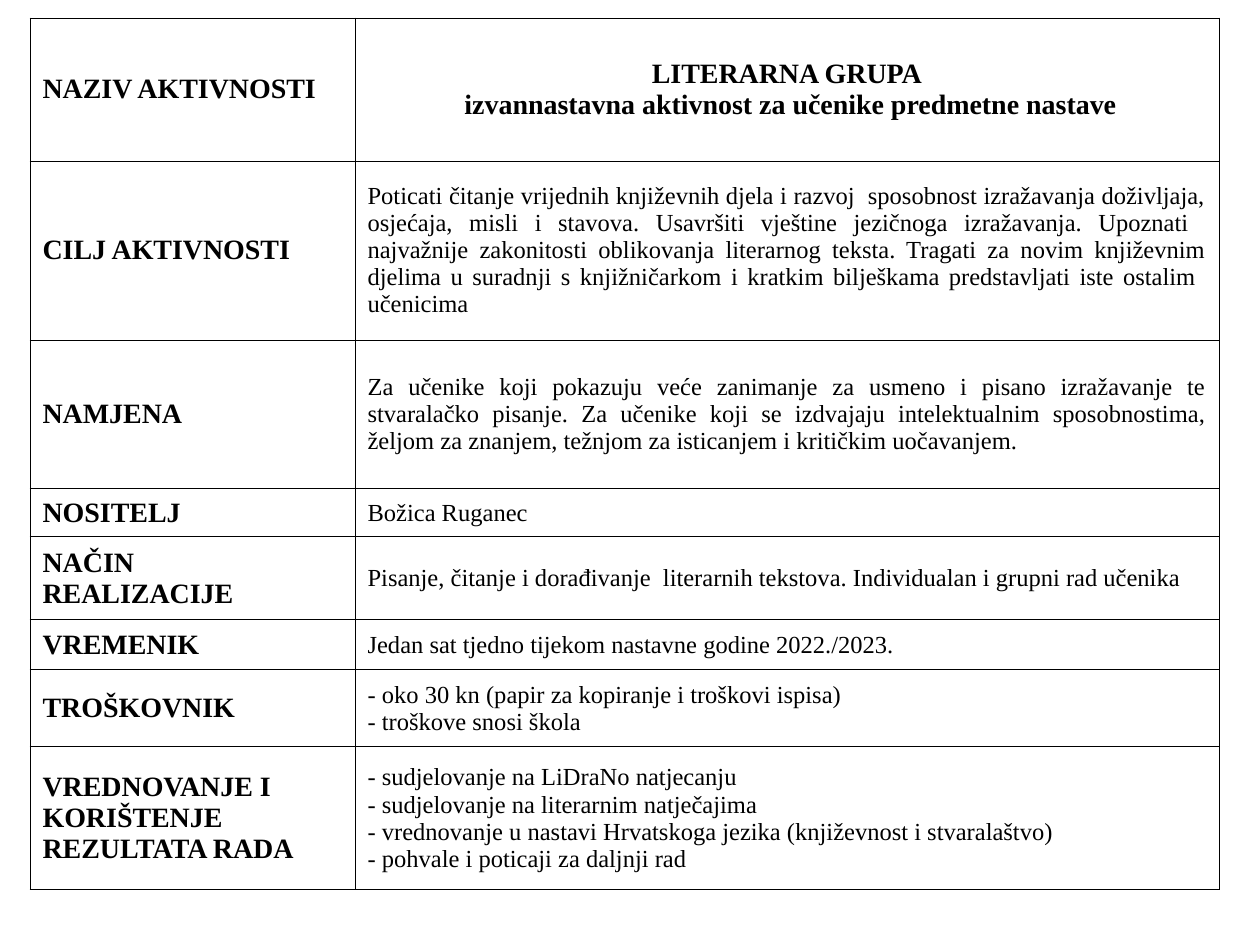
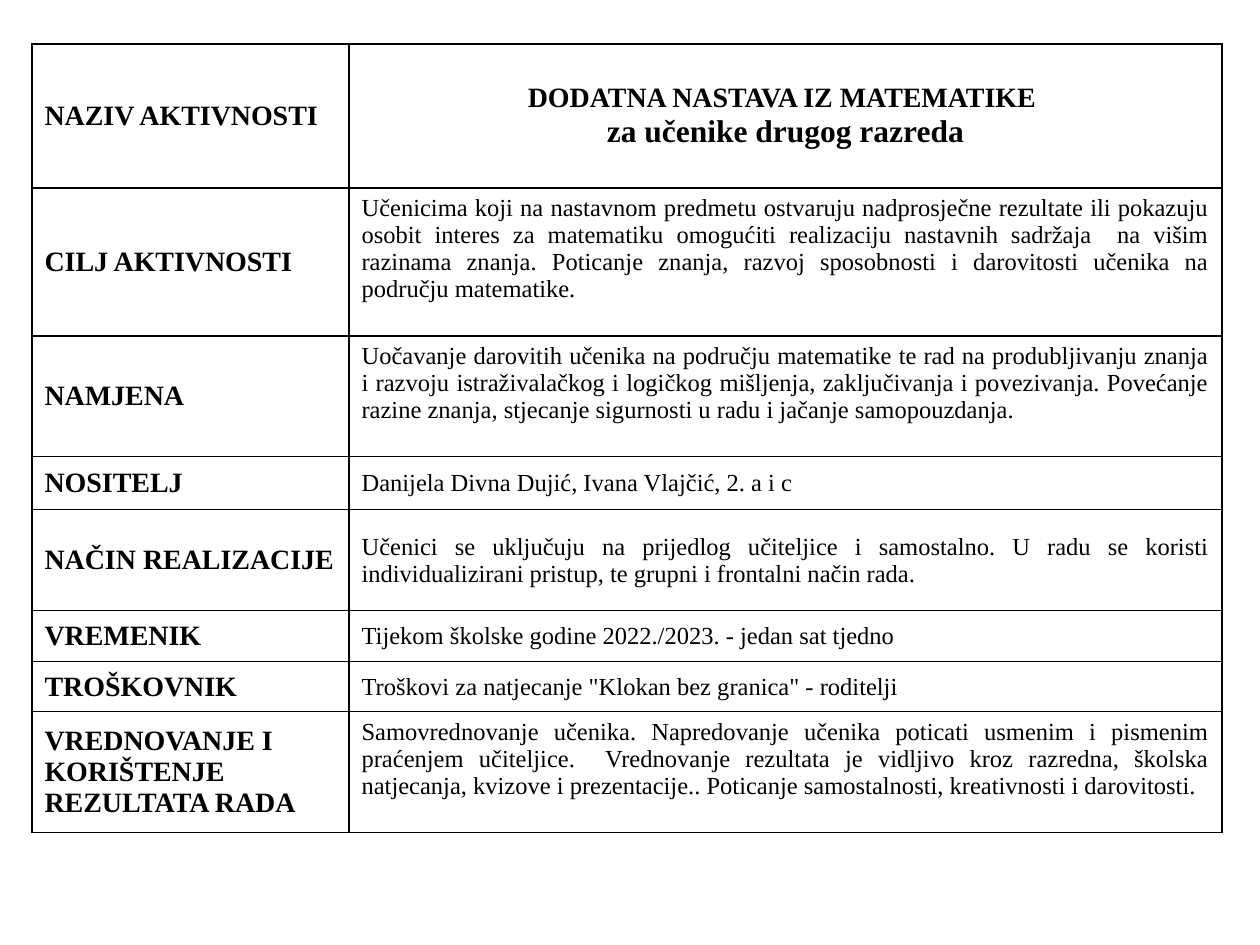
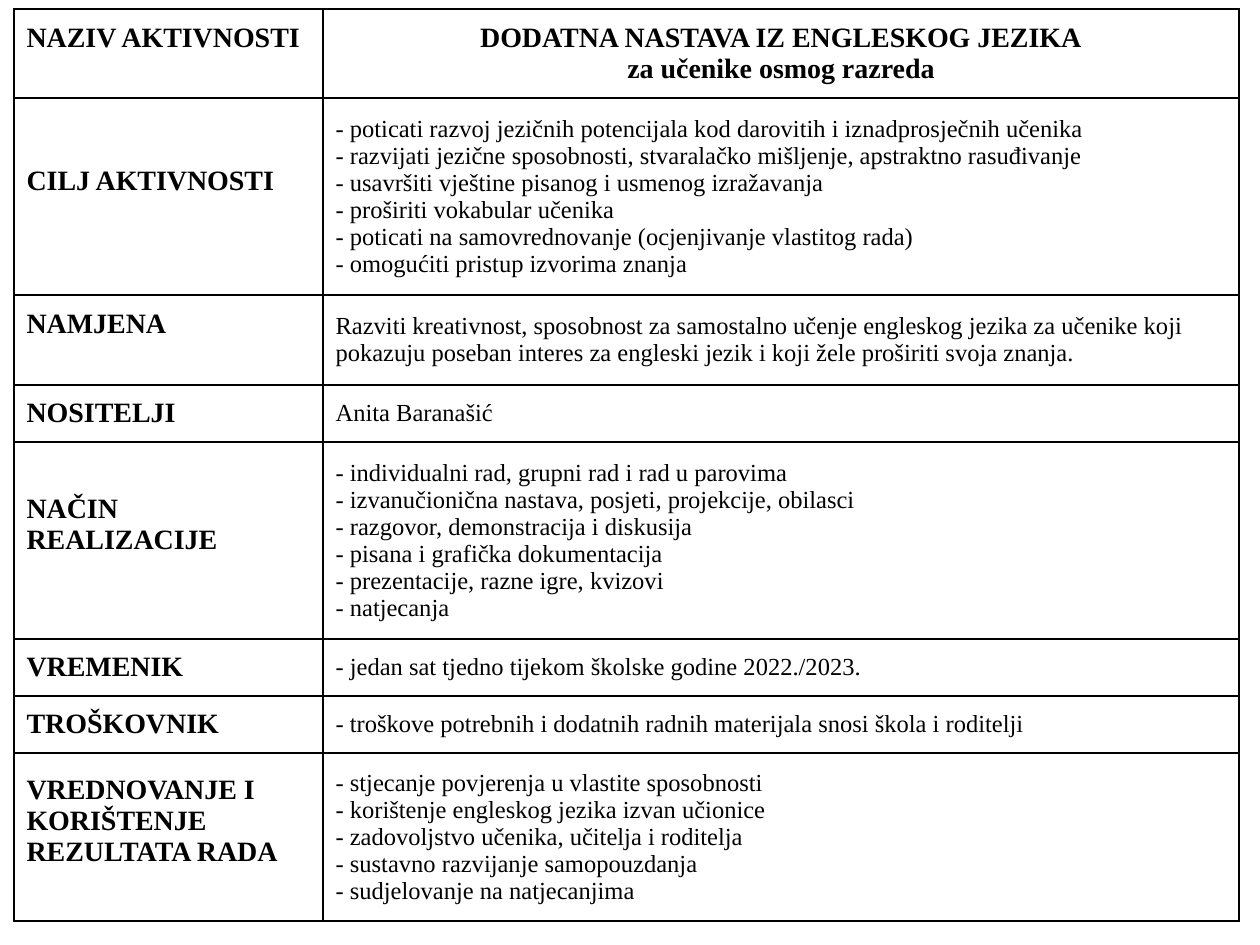
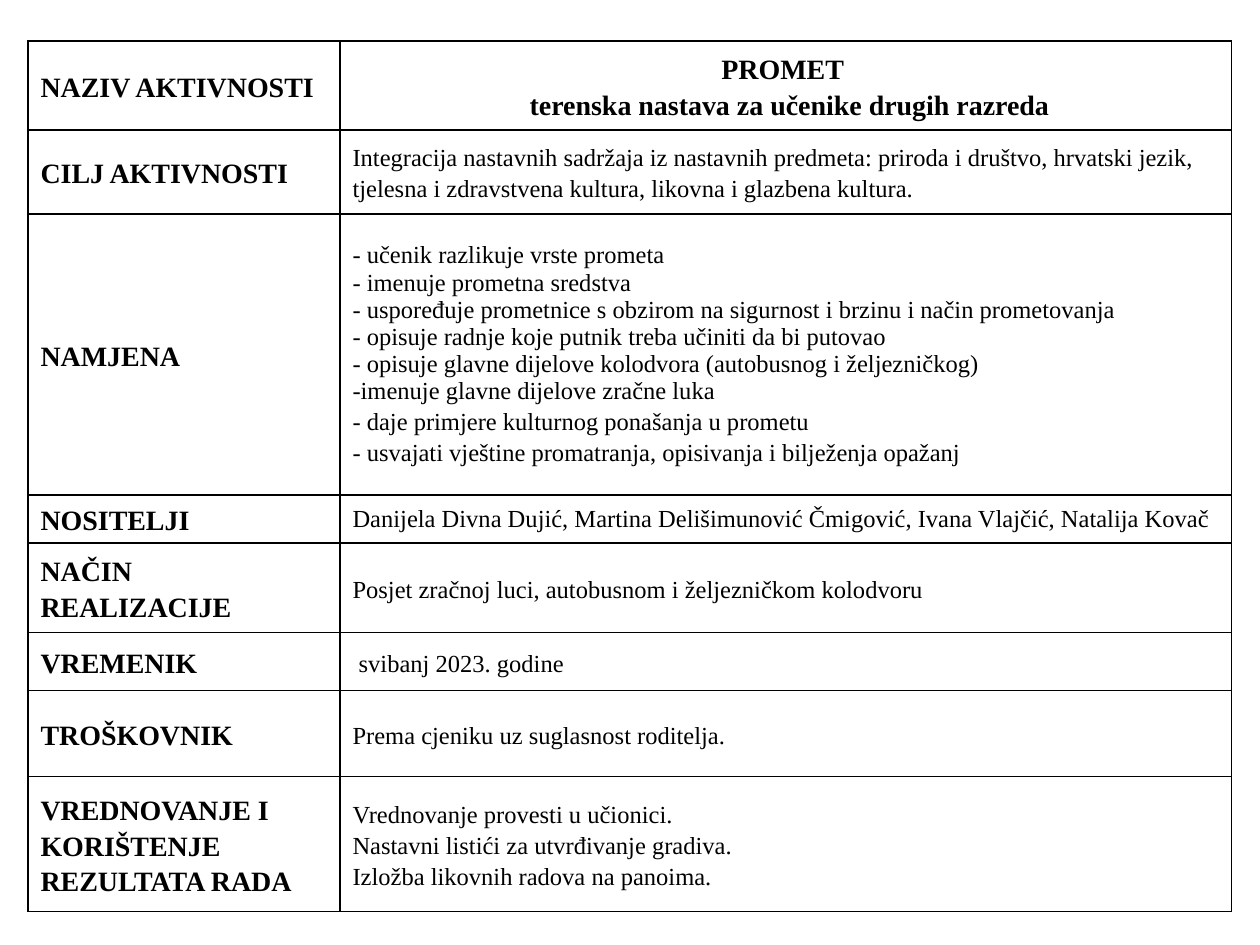
from lxml import etree
from pptx import Presentation
from pptx.dml.color import RGBColor
from pptx.enum.text import MSO_ANCHOR, PP_ALIGN
from pptx.oxml.ns import qn
from pptx.util import Pt

EMU_PER_PX = 914400 / 126
BLACK = RGBColor(0x00, 0x00, 0x00)
FONT = "Times New Roman"
LABEL_SIZE = 16
BODY_SIZE = 14
MIDDLE = MSO_ANCHOR.MIDDLE
LEFT = PP_ALIGN.LEFT
CENTER = PP_ALIGN.CENTER
JUSTIFY = PP_ALIGN.JUSTIFY
BORDER_SIDES = ("a:lnL", "a:lnR", "a:lnT", "a:lnB")
CELL_MARGIN = 6

LABELS = [
    "NAZIV AKTIVNOSTI",
    "CILJ AKTIVNOSTI",
    "NAMJENA",
    "NOSITELJ",
    "NAČIN REALIZACIJE",
    "VREMENIK",
    "TROŠKOVNIK",
    "VREDNOVANJE I KORIŠTENJE REZULTATA RADA",
]

ACTIVITIES = [
    {
        "corner": (30, 18),
        "columns": (325, 864),
        "rows": (143, 179, 149, 48, 83, 50, 77, 143),
        "border": 0.6,
        "align": JUSTIFY,
        "labels": {4: "NAČIN\nREALIZACIJE", 7: "VREDNOVANJE I KORIŠTENJE\nREZULTATA RADA"},
        "contents": [
            "LITERARNA GRUPA\n izvannastavna aktivnost za učenike predmetne nastave",
            "Poticati čitanje vrijednih književnih djela i razvoj  sposobnost izražavanja "
            "doživljaja, osjećaja, misli i stavova. Usavršiti vještine jezičnoga izražavanja. "
            "Upoznati  najvažnije zakonitosti oblikovanja literarnog teksta. Tragati za novim "
            "književnim djelima u suradnji s knjižničarkom i kratkim bilješkama predstavljati "
            "iste ostalim  učenicima",
            "Za učenike koji pokazuju veće zanimanje za usmeno i pisano izražavanje te "
            "stvaralačko pisanje. Za učenike koji se izdvajaju intelektualnim sposobnostima, "
            "željom za znanjem, težnjom za isticanjem i kritičkim uočavanjem.",
            "Božica Ruganec",
            "Pisanje, čitanje i dorađivanje  literarnih tekstova. Individualan i grupni rad učenika",
            "Jedan sat tjedno tijekom nastavne godine 2022./2023.",
            "- oko 30 kn (papir za kopiranje i troškovi ispisa)\n- troškove snosi škola",
            "- sudjelovanje na LiDraNo natjecanju\n"
            "- sudjelovanje na literarnim natječajima\n"
            "- vrednovanje u nastavi Hrvatskoga jezika (književnost i stvaralaštvo)\n"
            "- pohvale i poticaji za daljnji rad",
        ],
    },
    {
        "corner": (32, 44),
        "columns": (317, 873),
        "rows": (144, 148, 121, 53, 101, 51, 50, 121),
        "border": 0.75,
        "align": JUSTIFY,
        "subtitle_size": 18,
        "raised": {(1, 1): 27, (2, 1): 27, (7, 1): 27},
        "contents": [
            "DODATNA NASTAVA IZ MATEMATIKE \nza učenike drugog razreda",
            "Učenicima koji na nastavnom predmetu ostvaruju nadprosječne rezultate ili pokazuju "
            "osobit interes za matematiku omogućiti realizaciju nastavnih sadržaja  na višim "
            "razinama znanja. Poticanje znanja, razvoj sposobnosti i darovitosti učenika na "
            "području matematike.",
            "Uočavanje darovitih učenika na području matematike te rad na produbljivanju znanja "
            "i razvoju istraživalačkog i logičkog mišljenja, zaključivanja i povezivanja. "
            "Povećanje razine znanja, stjecanje sigurnosti u radu i jačanje samopouzdanja.",
            "Danijela Divna Dujić, Ivana Vlajčić, 2. a i c",
            "Učenici se uključuju na prijedlog učiteljice i samostalno. U radu se koristi "
            "individualizirani pristup, te grupni i frontalni način rada.",
            "Tijekom školske godine 2022./2023. - jedan sat tjedno",
            'Troškovi za natjecanje "Klokan bez granica" - roditelji',
            "Samovrednovanje učenika. Napredovanje učenika poticati usmenim i pismenim praćenjem "
            "učiteljice.  Vrednovanje rezultata je vidljivo kroz razredna, školska natjecanja, "
            "kvizove i prezentacije.. Poticanje samostalnosti, kreativnosti i darovitosti.",
        ],
    },
    {
        "corner": (14, 9),
        "columns": (309, 916),
        "rows": (89, 197, 90, 57, 197, 57, 57, 168),
        "border": 1,
        "align": LEFT,
        "labels": {3: "NOSITELJI"},
        "raised": {(row, 0): 31 for row in (0, 1, 2, 4, 7)},
        "contents": [
            "DODATNA NASTAVA IZ ENGLESKOG JEZIKA\nza učenike osmog razreda",
            "- poticati razvoj jezičnih potencijala kod darovitih i iznadprosječnih učenika\n"
            "- razvijati jezične sposobnosti, stvaralačko mišljenje, apstraktno rasuđivanje\n"
            "- usavršiti vještine pisanog i usmenog izražavanja\n"
            "- proširiti vokabular učenika\n"
            "- poticati na samovrednovanje (ocjenjivanje vlastitog rada)\n"
            "- omogućiti pristup izvorima znanja",
            "Razviti kreativnost, sposobnost za samostalno učenje engleskog jezika za učenike "
            "koji pokazuju poseban interes za engleski jezik i koji žele proširiti svoja znanja.",
            "Anita Baranašić",
            "- individualni rad, grupni rad i rad u parovima\n"
            "- izvanučionična nastava, posjeti, projekcije, obilasci\n"
            "- razgovor, demonstracija i diskusija\n"
            "- pisana i grafička dokumentacija\n"
            "- prezentacije, razne igre, kvizovi\n"
            "- natjecanja",
            "- jedan sat tjedno tijekom školske godine 2022./2023.",
            "- troškove potrebnih i dodatnih radnih materijala snosi škola i roditelji",
            "- stjecanje povjerenja u vlastite sposobnosti\n"
            "- korištenje engleskog jezika izvan učionice\n"
            "- zadovoljstvo učenika, učitelja i roditelja\n"
            "- sustavno razvijanje samopouzdanja\n"
            "- sudjelovanje na natjecanjima",
        ],
    },
    {
        "corner": (28, 41),
        "columns": (312, 892),
        "rows": (89, 84, 281, 48, 90, 58, 86, 135),
        "border": 0.75,
        "align": LEFT,
        "labels": {3: "NOSITELJI"},
        "line_spacing": 1.15,
        "single_spaced": {(2, 1): 6, (3, 1): 1},
        "contents": [
            "PROMET \n terenska nastava za učenike drugih razreda",
            "Integracija nastavnih sadržaja iz nastavnih predmeta: priroda i društvo, hrvatski "
            "jezik, tjelesna i zdravstvena kultura, likovna i glazbena kultura.",
            "- učenik razlikuje vrste prometa\n"
            "- imenuje prometna sredstva\n"
            "- uspoređuje prometnice s obzirom na sigurnost i brzinu i način prometovanja\n"
            "- opisuje radnje koje putnik treba učiniti da bi putovao\n"
            "- opisuje glavne dijelove kolodvora (autobusnog i željezničkog)\n"
            "-imenuje glavne dijelove zračne luka\n"
            "- daje primjere kulturnog ponašanja u prometu\n"
            "- usvajati vještine promatranja, opisivanja i bilježenja opažanj",
            "Danijela Divna Dujić, Martina Delišimunović Čmigović, Ivana Vlajčić, Natalija Kovač",
            "Posjet zračnoj luci, autobusnom i željezničkom kolodvoru",
            " svibanj 2023. godine",
            "Prema cjeniku uz suglasnost roditelja.",
            "Vrednovanje provesti u učionici.\n"
            "Nastavni listići za utvrđivanje gradiva.\n"
            "Izložba likovnih radova na panoima.",
        ],
    },
]


def px(length):
    return round(length * EMU_PER_PX)


def draw_borders(cell, points):
    properties = cell._tc.get_or_add_tcPr()
    for position, side in enumerate(BORDER_SIDES):
        line = etree.Element(qn(side), w=str(Pt(points)))
        fill = etree.SubElement(line, qn("a:solidFill"))
        etree.SubElement(fill, qn("a:srgbClr"), val=str(BLACK))
        properties.insert(position, line)


deck = Presentation()
deck.slide_width = px(1260)
deck.slide_height = px(945)

for activity in ACTIVITIES:
    slide = deck.slides.add_slide(deck.slide_layouts[6])
    left, top = activity["corner"]
    columns, rows = activity["columns"], activity["rows"]
    table = slide.shapes.add_table(
        len(rows), len(columns), px(left), px(top), px(sum(columns)), px(sum(rows))
    ).table
    table.first_row = False
    table.horz_banding = False
    for column, width in zip(table.columns, columns):
        column.width = px(width)
    for row, height in zip(table.rows, rows):
        row.height = px(height)

    labels = [activity.get("labels", {}).get(i, label) for i, label in enumerate(LABELS)]
    for row_index, texts in enumerate(zip(labels, activity["contents"])):
        for column_index, text in enumerate(texts):
            place = (row_index, column_index)
            is_title = place == (0, 1)
            is_bold = is_title or column_index == 0
            cell = table.cell(*place)
            cell.fill.background()
            draw_borders(cell, activity["border"])
            cell.vertical_anchor = MIDDLE
            cell.margin_top = px(CELL_MARGIN)
            cell.margin_bottom = px(CELL_MARGIN + activity.get("raised", {}).get(place, 0))
            cell.text_frame.text = text
            single_lines = activity.get("single_spaced", {}).get(place, 0)
            for number, paragraph in enumerate(cell.text_frame.paragraphs):
                if is_title:
                    paragraph.alignment = CENTER
                else:
                    paragraph.alignment = LEFT if column_index == 0 else activity["align"]
                if number >= single_lines:
                    paragraph.line_spacing = activity.get("line_spacing", 1.0)
                size = LABEL_SIZE if is_bold else BODY_SIZE
                if is_title and number == 1:
                    size = activity.get("subtitle_size", size)
                for run in paragraph.runs:
                    run.font.name = FONT
                    run.font.size = Pt(size)
                    run.font.bold = is_bold
                    run.font.color.rgb = BLACK

deck.save("out.pptx")
